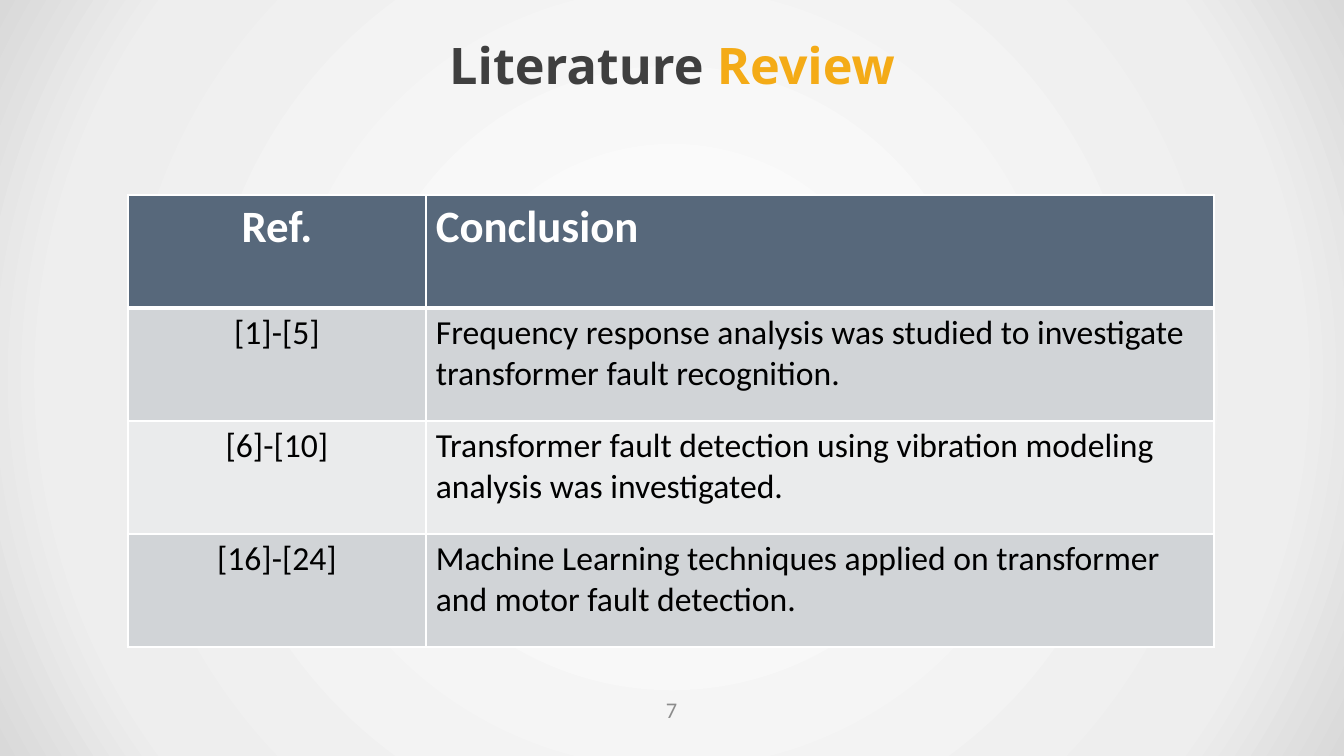
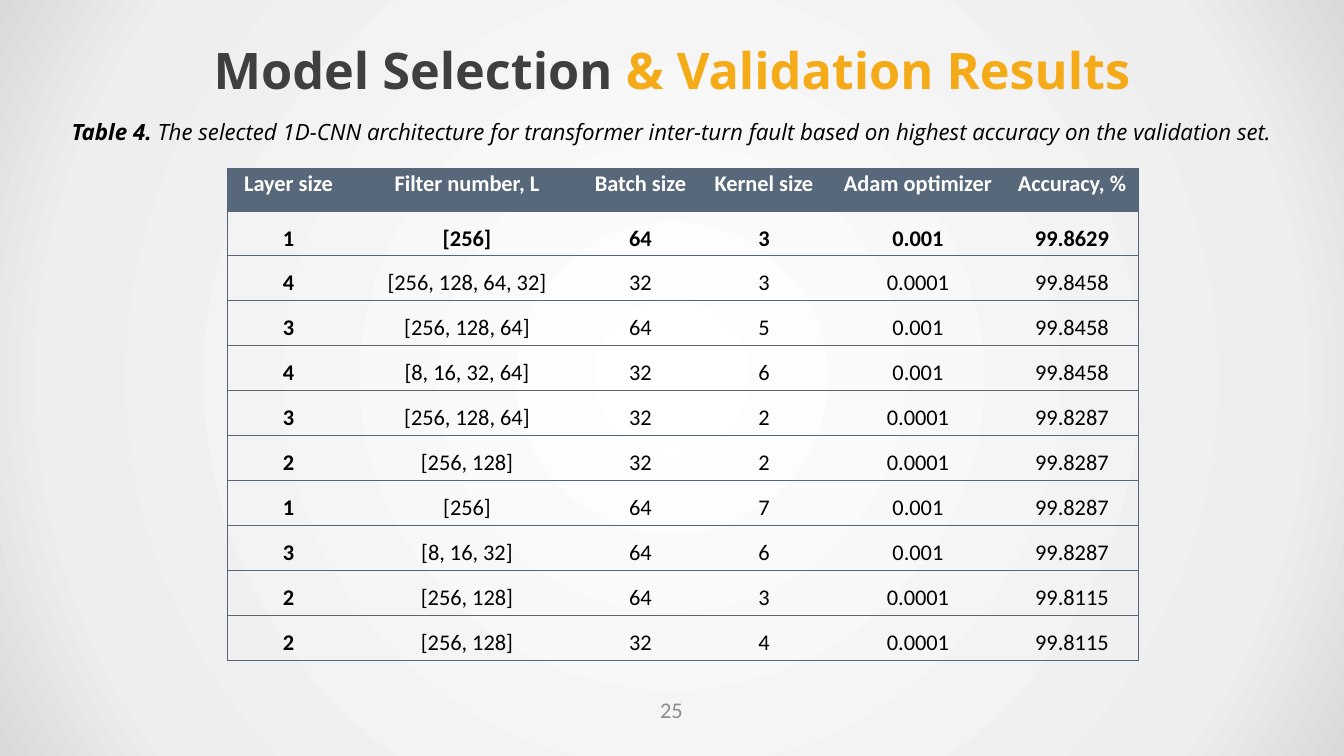
from lxml import etree
from pptx import Presentation
from pptx.dml.color import RGBColor
from pptx.enum.text import MSO_ANCHOR, MSO_AUTO_SIZE, PP_ALIGN
from pptx.oxml import parse_xml
from pptx.oxml.ns import nsdecls, qn
from pptx.util import Pt

PX = 9071  # EMU in one px
CENTER, LEFT = PP_ALIGN.CENTER, PP_ALIGN.LEFT
MIDDLE, TOP = MSO_ANCHOR.MIDDLE, MSO_ANCHOR.TOP
GROW = MSO_AUTO_SIZE.SHAPE_TO_FIT_TEXT

DARK = RGBColor(0x3F, 0x3F, 0x3F)
AMBER = RGBColor(0xF4, 0xAB, 0x17)
GRAY = RGBColor(0x8C, 0x8C, 0x8C)
BLACK = RGBColor(0, 0, 0)
WHITE = RGBColor(0xFF, 0xFF, 0xFF)
SLATE = RGBColor(0x57, 0x68, 0x7B)
RULE = RGBColor(0x54, 0x66, 0x79)
BAND_DARK = RGBColor(0xD1, 0xD4, 0xD7)
BAND_LIGHT = RGBColor(0xEA, 0xEB, 0xEC)
BACKDROP = [(0, WHITE), (81, RGBColor(0xEE, 0xEE, 0xEE)),
            (100, RGBColor(0xD9, 0xD9, 0xD9))]

HEAD_FONT, BODY_FONT = "Open Sans", "Calibri"
NO_STYLE = "{2D5ABB26-0587-4C30-8999-92F81FD0307C}"


def add_text(s, box, runs, size, font, anchor=MIDDLE, inset=(13, 7)):
    """Add a centred text box; runs are (text, colour, bold)."""
    sp = s.shapes.add_textbox(*(n * PX for n in box))
    tf = sp.text_frame
    tf.word_wrap = True
    tf.vertical_anchor = anchor
    tf.margin_left = tf.margin_right = inset[0] * PX
    tf.margin_top = tf.margin_bottom = inset[1] * PX
    p = tf.paragraphs[0]
    p.alignment = CENTER
    p.font.size, p.font.name = Pt(size), font
    for text, color, bold in runs:
        r = p.add_run()
        r.text = text
        r.font.color.rgb, r.font.bold = color, bold
    return tf


def set_borders(cell, color, widths):
    """Draw cell borders; widths are points for left, right, top, bottom."""
    tcPr = cell._tc.get_or_add_tcPr()
    for i, (side, width) in enumerate(zip("LRTB", widths)):
        ln = etree.Element(qn("a:ln" + side), w=str(Pt(width)))
        if width:
            fill = etree.SubElement(ln, qn("a:solidFill"))
            etree.SubElement(fill, qn("a:srgbClr"), val=str(color))
        else:
            etree.SubElement(ln, qn("a:noFill"))
        tcPr.insert(i, ln)


prs = Presentation()
prs.slide_width, prs.slide_height = 1344 * PX, 756 * PX
blank = prs.slide_layouts[6]

# Shared radial background
master = prs.slide_master
master.background.fill.solid()
bgPr = master.element.find(".//" + qn("p:bgPr"))
stops = "".join(f'<a:gs pos="{pos * 1000}"><a:srgbClr val="{color}"/></a:gs>'
                for pos, color in BACKDROP)
bgPr.replace(bgPr[0], parse_xml(
    f'<a:gradFill {nsdecls("a")} rotWithShape="1"><a:gsLst>{stops}</a:gsLst>'
    '<a:path path="circle"><a:fillToRect l="50000" t="50000" r="50000" b="50000"/>'
    '</a:path></a:gradFill>'))

# Slide contents
review = dict(
    title=("Literature", " Review"), title_top=25, number="7",
    at=(128, 195), cols=(298, 788), heights=(113, 113),
    sizes=(32, 24), spacing=(1, 1), inset=(10, 5), aligns=(CENTER, LEFT),
    fills=(BAND_DARK, BAND_LIGHT), line=WHITE, width=1, head_rule=3,
    grid=True, bold_lead=False,
    rows=[
        ("Ref.", "Conclusion"),
        ("[1]-[5]", "Frequency response analysis was studied to investigate "
                    "transformer fault recognition."),
        ("[6]-[10]", "Transformer fault detection using vibration modeling "
                     "analysis was investigated."),
        ("[16]-[24]", "Machine Learning techniques applied on transformer "
                      "and motor fault detection."),
    ])
results = dict(
    title=("Model Selection ", "& Validation Results"), title_top=30, number="25",
    at=(227, 168), cols=(123, 234, 113, 134, 174, 134), heights=(43, 45),
    sizes=(16, 16), spacing=(1.07, 1.5), inset=(7, 0), aligns=(CENTER,) * 6,
    fills=(None,), line=RULE, width=0.75, head_rule=0.75,
    grid=False, bold_lead=True,
    rows=[
        ("Layer size", "Filter number, L", "Batch size", "Kernel size",
         "Adam optimizer", "Accuracy, %"),
        ("1", "[256]", "64", "3", "0.001", "99.8629"),
        ("4", "[256, 128, 64, 32]", "32", "3", "0.0001", "99.8458"),
        ("3", "[256, 128, 64]", "64", "5", "0.001", "99.8458"),
        ("4", "[8, 16, 32, 64]", "32", "6", "0.001", "99.8458"),
        ("3", "[256, 128, 64]", "32", "2", "0.0001", "99.8287"),
        ("2", "[256, 128]", "32", "2", "0.0001", "99.8287"),
        ("1", "[256]", "64", "7", "0.001", "99.8287"),
        ("3", "[8, 16, 32]", "64", "6", "0.001", "99.8287"),
        ("2", "[256, 128]", "64", "3", "0.0001", "99.8115"),
        ("2", "[256, 128]", "32", "4", "0.0001", "99.8115"),
    ])

for d in (review, results):
    s = prs.slides.add_slide(blank)

    # Title and slide number
    add_text(s, (67, d["title_top"], 1210, 79),
             [(d["title"][0], DARK, True), (d["title"][1], AMBER, True)],
             36, HEAD_FONT)
    add_text(s, (643, 689, 57, 42), [(d["number"], GRAY, False)], 16, BODY_FONT)

    # Table frame
    rows, cols, heights = d["rows"], d["cols"], d["heights"]
    total = heights[0] + heights[1] * (len(rows) - 1)
    frame = s.shapes.add_table(len(rows), len(cols), d["at"][0] * PX,
                               d["at"][1] * PX, sum(cols) * PX, total * PX)
    table = frame.table
    table._tbl.tblPr.find(qn("a:tableStyleId")).text = NO_STYLE
    table.horz_banding = False
    for col, width in zip(table.columns, cols):
        col.width = width * PX

    # Table cells
    for i, row in enumerate(rows):
        body = int(i > 0)
        table.rows[i].height = heights[body] * PX
        fill = d["fills"][(i - 1) % len(d["fills"])] if body else SLATE
        for j, text in enumerate(row):
            cell = table.cell(i, j)
            cell.margin_left = cell.margin_right = d["inset"][0] * PX
            cell.margin_top = cell.margin_bottom = d["inset"][1] * PX
            if fill is None:
                cell.fill.background()
            else:
                cell.fill.solid()
                cell.fill.fore_color.rgb = fill
            cell.text = text
            p = cell.text_frame.paragraphs[0]
            p.alignment = d["aligns"][j]
            p.line_spacing = d["spacing"][body]
            p.font.name, p.font.size = BODY_FONT, Pt(d["sizes"][body])
            p.font.color.rgb = BLACK if body else WHITE
            p.font.bold = not body or (d["bold_lead"] and (i == 1 or j == 0))
            width = d["width"]
            set_borders(cell, d["line"], (
                width if d["grid"] or j == 0 else 0,
                width if d["grid"] or j == len(cols) - 1 else 0,
                d["head_rule"] if i == 1 else width,
                d["head_rule"] if i == 0 else width))

# Table caption on the results slide
tf = add_text(s, (48, 86, 1247, 56), [
    ("Table 4. ", BLACK, True),
    ("The selected 1D-CNN architecture for transformer inter-turn fault based on "
     "highest accuracy on the validation set.", BLACK, False),
], 16, HEAD_FONT, TOP, (10, 5))
tf.auto_size = GROW
p = tf.paragraphs[0]
p.font.italic = True
p.line_spacing, p.space_after = 2.0, Pt(8)

prs.save("out.pptx")
